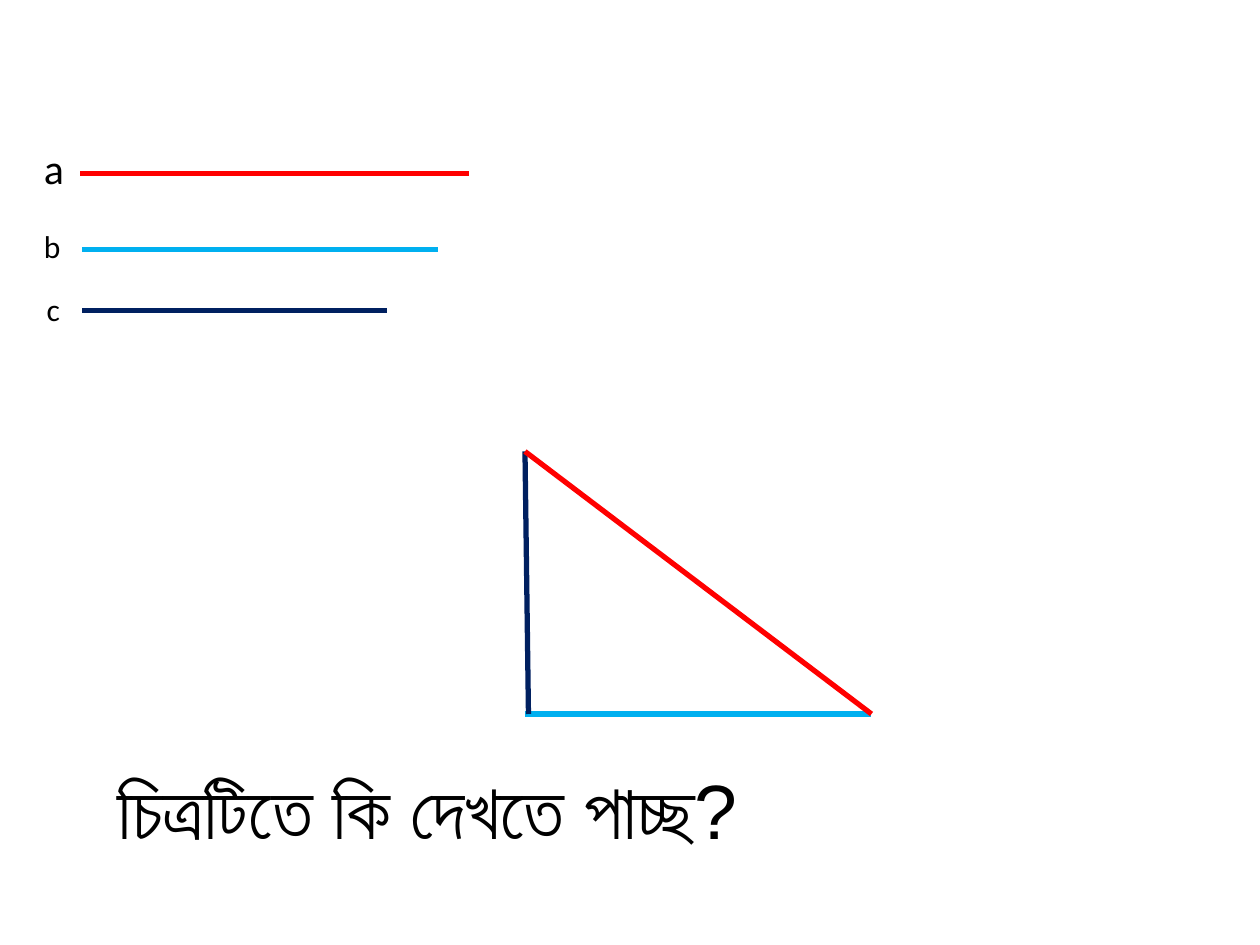
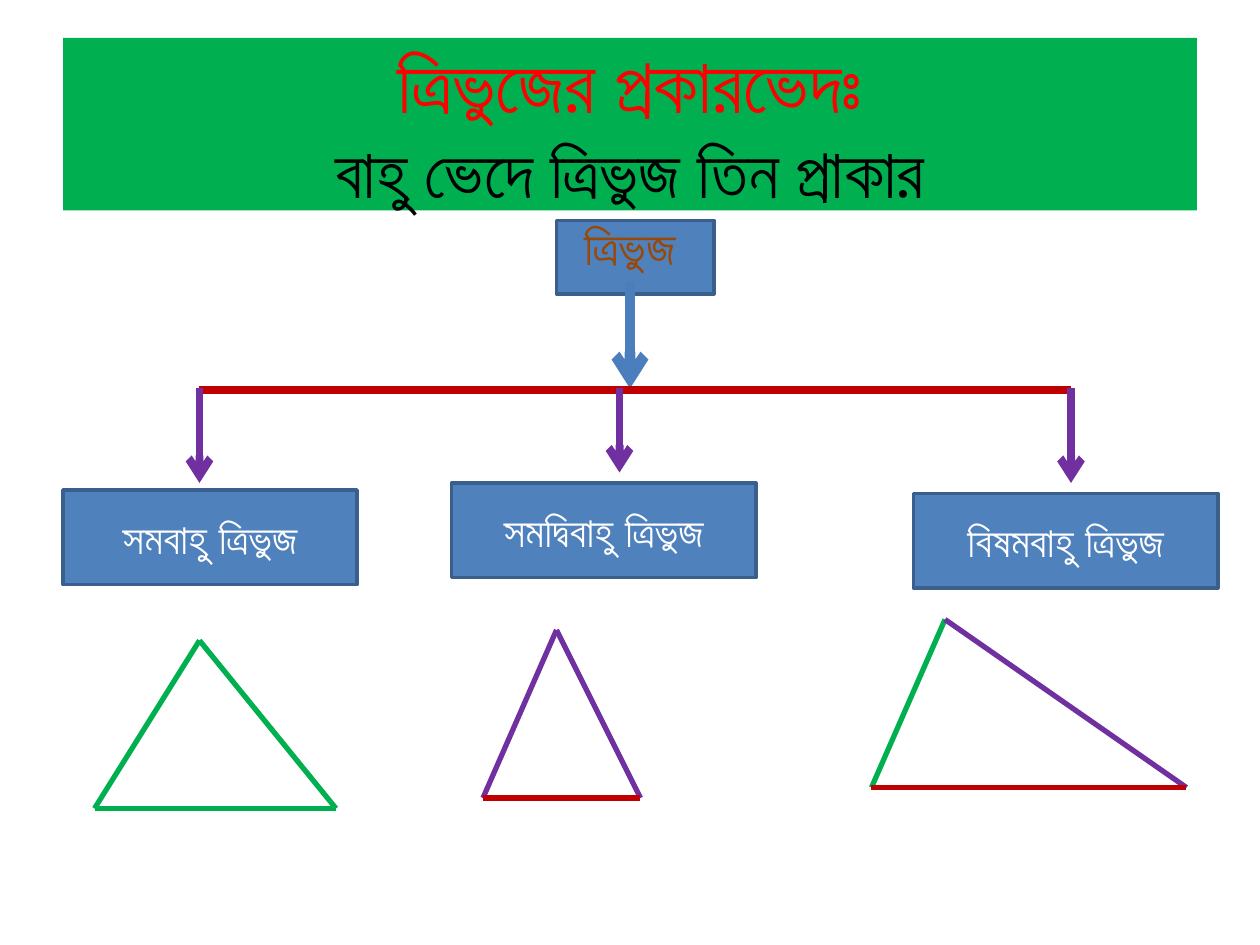
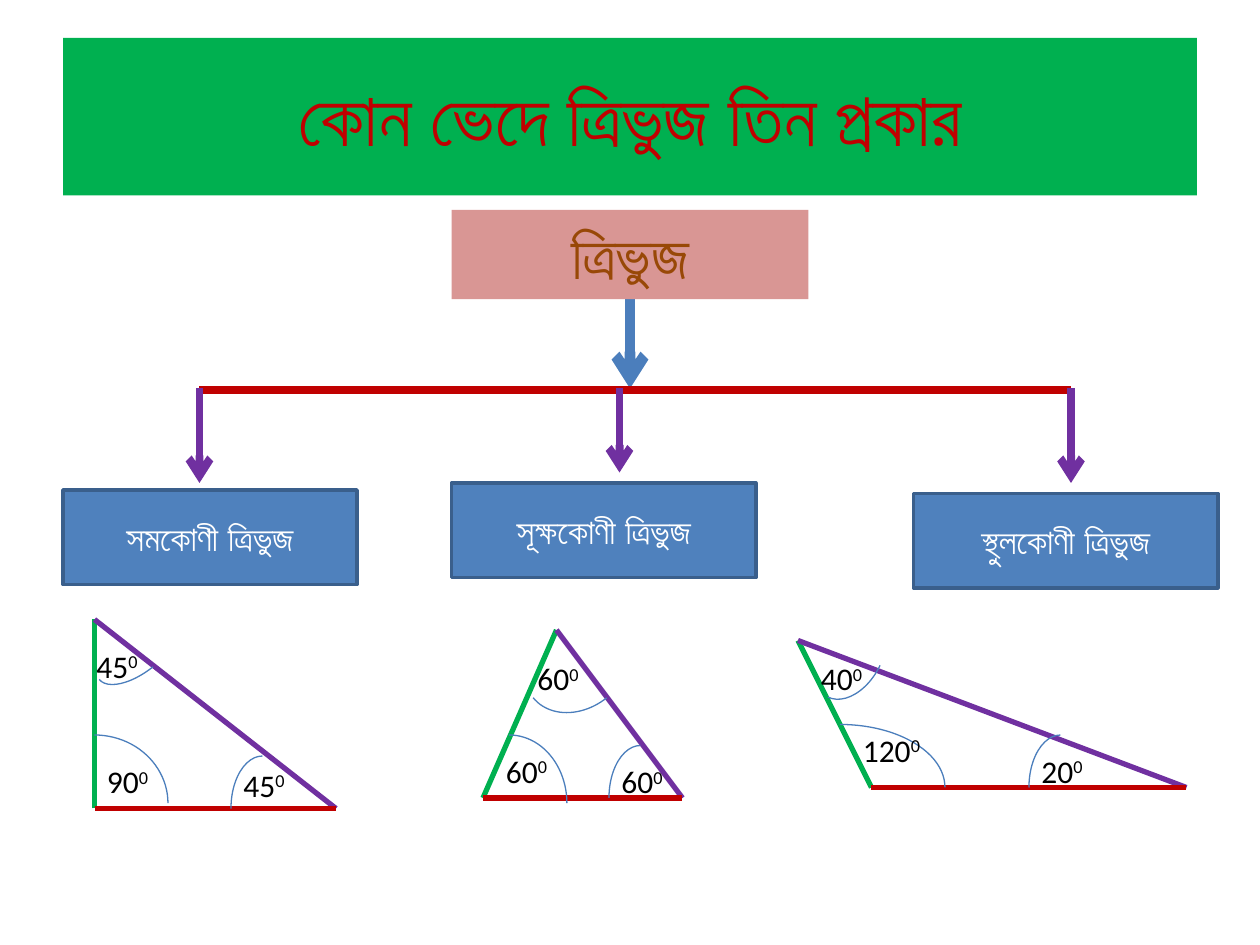
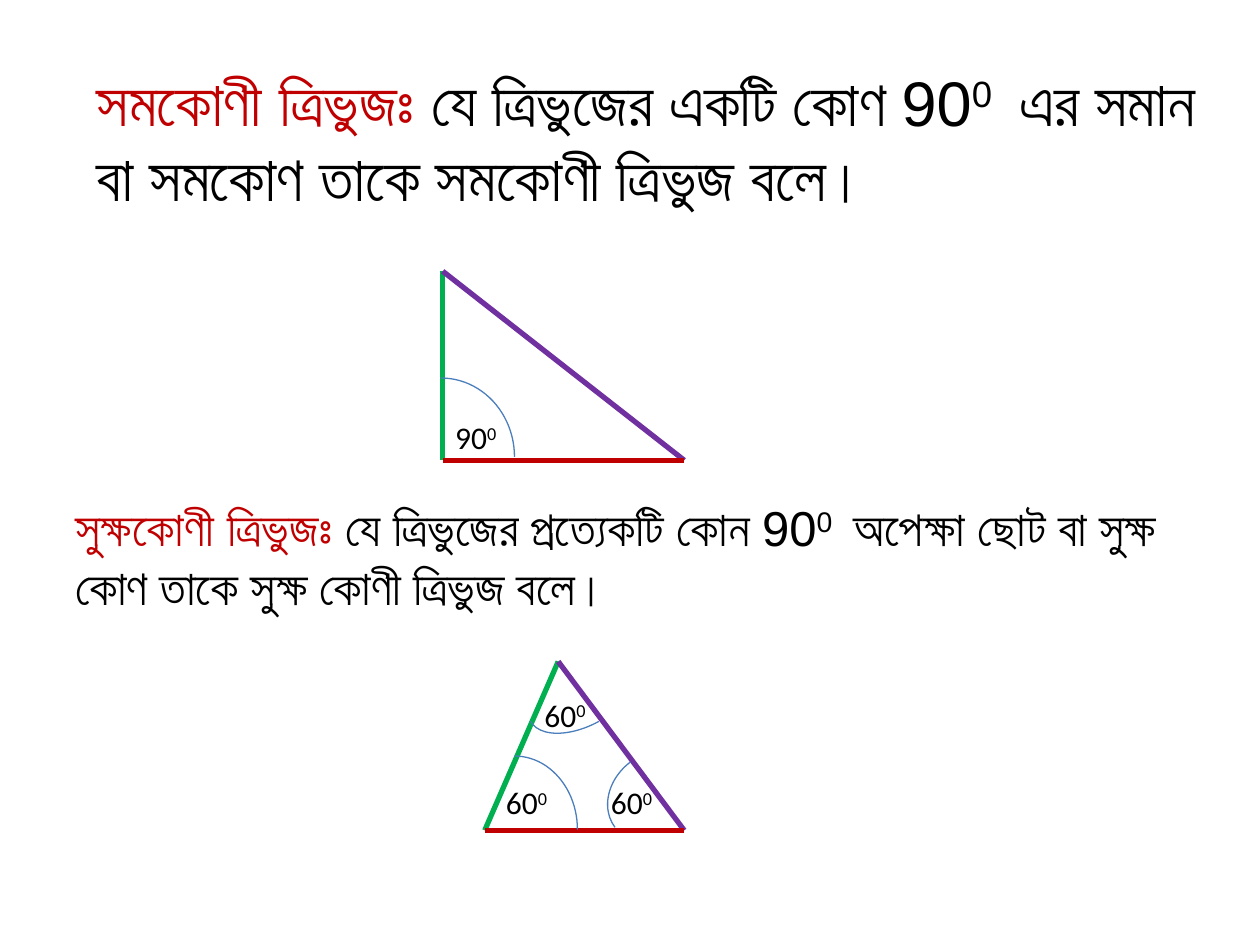
from pptx import Presentation
from pptx.dml.color import RGBColor
from pptx.enum.shapes import MSO_CONNECTOR as Connector, MSO_SHAPE as Shape
from pptx.enum.text import MSO_ANCHOR as Anchor, MSO_AUTO_SIZE as AutoSize, PP_ALIGN as Align
from pptx.oxml.ns import qn
from pptx.util import Pt
from lxml.etree import SubElement

COLORS = {
    "black": "000000", "white": "FFFFFF", "red": "FF0000", "sky": "00B0F0",
    "navy": "002060", "green": "00B050", "crimson": "C00000", "purple": "7030A0",
    "blue": "4F81BD", "border": "3A5F8C", "stroke": "4B7EBC", "brown": "984807",
    "rose": "D99694",
}
TITLE_ONLY, BLANK = 5, 6
BRANCHES = [
    (114, 276, (36, 280, 168, 54)),
    (354, 270, (258, 276, 174, 54)),
    (612, 276, (522, 282, 174, 54)),
]
MIXED_SIDES = ("green", "purple", "crimson")


def rgb(name):
    return RGBColor.from_string(COLORS[name])


def points(values):
    return [Pt(value) for value in values]


def add_run(paragraph, text, size=18, color="black", font="Arial", bold=False, raised=False):
    run = paragraph.add_run()
    run.text = text
    run.font.size = Pt(size)
    run.font.name = font
    run.font.bold = bold
    run.font.color.rgb = rgb(color)
    if raised:
        run._r.get_or_add_rPr().set("baseline", "30000")


def add_text(slide, box, runs, align=Align.LEFT, fill=None):
    shape = slide.shapes.add_textbox(*points(box))
    shape.text_frame.word_wrap = True
    if fill:
        shape.fill.solid()
        shape.fill.fore_color.rgb = rgb(fill)
    paragraph = shape.text_frame.paragraphs[0]
    paragraph.alignment = align
    for text, style in runs:
        add_run(paragraph, text, **style)


def add_box(slide, box, text="", size=24):
    shape = slide.shapes.add_shape(Shape.RECTANGLE, *points(box))
    shape.shadow.inherit = False
    shape.fill.solid()
    shape.fill.fore_color.rgb = rgb("blue")
    shape.line.color.rgb = rgb("border")
    shape.line.width = Pt(2)
    if text:
        shape.text_frame.vertical_anchor = Anchor.MIDDLE
        paragraph = shape.text_frame.paragraphs[0]
        paragraph.alignment = Align.CENTER
        add_run(paragraph, text, size=size, color="white", bold=True)


def add_line(slide, start, end, color, width=3, arrow=False):
    connector = slide.shapes.add_connector(Connector.STRAIGHT, *points(start + end))
    connector.line.color.rgb = rgb(color)
    connector.line.width = Pt(width)
    if arrow:
        SubElement(connector.line._get_or_add_ln(), qn("a:tailEnd"), type="arrow")
    SubElement(connector._element.spPr, qn("a:effectLst"))


def add_triangle(slide, left, apex, right, sides=MIXED_SIDES):
    corners = [(left, apex), (apex, right), (left, right)]
    for (start, end), color in zip(corners, sides):
        add_line(slide, start, end, color)


def add_angle(slide, degrees, label, arc_box, rotation=0, flip=False):
    arc = slide.shapes.add_shape(Shape.ARC, *points(arc_box))
    arc.shadow.inherit = False
    arc.fill.background()
    arc.line.color.rgb = rgb("stroke")
    arc.line.width = Pt(0.75)
    arc.rotation = rotation
    if flip:
        arc._element.spPr.xfrm.set("flipH", "1")
    add_text(slide, label + (72, 29), [
        (degrees, {"font": "Calibri"}),
        ("0", {"font": "Calibri", "raised": True}),
    ])


def add_title(slide, height, lines):
    title = slide.shapes.title
    title.left, title.top, title.width, title.height = points((36, 21.6, 648, height))
    title.fill.solid()
    title.fill.fore_color.rgb = rgb("green")
    frame = title.text_frame
    frame.auto_size = AutoSize.NONE
    frame.vertical_anchor = Anchor.MIDDLE
    paragraph = frame.paragraphs[0]
    paragraph.alignment = Align.CENTER
    for index, (text, size, color) in enumerate(lines):
        if index:
            paragraph.add_line_break()
        add_run(paragraph, text, size=size, color=color)


def add_branches(slide, root_bottom, names, size):
    add_line(slide, (360, root_bottom), (360, 222), "stroke", 6, arrow=True)
    add_line(slide, (114, 223), (612, 223), "crimson", 4.5)
    for (x, tip, box), name in zip(BRANCHES, names):
        add_line(slide, (x, 222), (x, tip), "purple", 4.5, arrow=True)
        add_box(slide, box, name, size)


def add_slide(presentation, layout):
    return presentation.slides.add_slide(presentation.slide_layouts[layout])


def build_question(presentation):
    slide = add_slide(presentation, BLANK)
    sides = [
        ("a", 24, (18, 78, 30, 36), (46, 99), (268, 99), "red"),
        ("b", 18, (18, 126, 24, 29), (47, 142.5), (250.5, 142.5), "sky"),
        ("c", 18, (19.5, 162, 18, 29), (47, 177.5), (221, 177.5), "navy"),
    ]
    for name, size, box, start, end, color in sides:
        add_line(slide, start, end, color)
        add_text(slide, box, [(name, {"size": size, "font": "Calibri"})])
    add_line(slide, (300, 408), (498, 408), "sky")
    add_line(slide, (302, 408), (300, 258), "navy")
    add_line(slide, (300, 258), (498, 408), "red")
    add_text(slide, (60, 432, 600, 60.5), [("চিত্রটিতে কি দেখতে পাচ্ছ?", {"size": 44})])


def build_types_by_side(presentation):
    slide = add_slide(presentation, TITLE_ONLY)
    add_title(slide, 98.6, [
        ("ত্রিভুজের প্রকারভেদঃ", 44.1, "red"),
        ("বাহু ভেদে ত্রিভুজ তিন প্রাকার", 39.6, "black"),
    ])
    add_box(slide, (318, 126, 90, 42))
    add_text(slide, (258, 120, 204, 41), [("ত্রিভুজ", {"size": 28, "color": "brown"})], Align.CENTER)
    add_branches(slide, 161, ["সমবাহু ত্রিভুজ", "সমদ্বিবাহু ত্রিভুজ", "বিষমবাহু ত্রিভুজ"], 24)
    add_triangle(slide, (54, 462), (114, 366), (192, 462), ("green", "green", "green"))
    add_triangle(slide, (276, 456), (318, 360), (366, 456), ("purple", "purple", "crimson"))
    add_triangle(slide, (498, 450), (540, 354), (678, 450))


def build_types_by_angle(presentation):
    slide = add_slide(presentation, TITLE_ONLY)
    add_title(slide, 90, [("কোন ভেদে ত্রিভুজ তিন প্রকার", 43.2, "crimson")])
    add_branches(slide, 171, ["সমকোণী ত্রিভুজ", "সূক্ষকোণী ত্রিভুজ", "স্থুলকোণী ত্রিভুজ"], 20)
    add_text(slide, (258, 120, 204, 51), [("ত্রিভুজ", {"size": 36, "color": "brown"})],
             Align.CENTER, fill="rose")
    add_triangle(slide, (54, 462), (54, 354), (192, 462))
    add_triangle(slide, (276, 456), (318, 360), (390, 456))
    add_triangle(slide, (498, 450), (456, 366), (678, 450))
    add_angle(slide, "90", (54, 432), (12, 420, 84, 78))
    add_angle(slide, "45", (132, 434), (132, 432, 36, 60), flip=True)
    add_angle(slide, "45", (48, 366), (50.5, 357, 57, 27), rotation=141.4)
    add_angle(slide, "60", (282, 426), (258, 420, 66, 78))
    add_angle(slide, "60", (348, 432), (348, 426, 36, 60), flip=True)
    add_angle(slide, "60", (300, 373), (297.5, 352, 65.5, 52.5), rotation=141.4)
    add_angle(slide, "120", (486, 414), (420, 414, 120, 72))
    add_angle(slide, "40", (462, 373), (456.5, 353, 58.5, 38), rotation=115.7)
    add_angle(slide, "20", (588, 426), (588, 420, 36, 60), flip=True)


def add_definition(slide, box, size, term, opening, ending):
    add_text(slide, box, [
        (term, {"size": size, "color": "crimson", "bold": True}),
        (opening, {"size": size}),
        ("0 ", {"size": size, "raised": True}),
        (ending, {"size": size}),
    ])


def build_definitions(presentation):
    slide = add_slide(presentation, BLANK)
    add_definition(slide, (48, 32.5, 648, 138), 36, "সমকোণী ত্রিভুজঃ ",
                   "যে ত্রিভুজের একটি কোণ 90",
                   " এর সমান বা সমকোণ তাকে সমকোণী ত্রিভুজ বলে।")
    add_triangle(slide, (253, 263), (253, 155), (391, 263))
    add_angle(slide, "90", (253, 235.5), (210, 216, 84, 90))
    add_definition(slide, (36, 281, 654, 75), 28, "সুক্ষকোণী ত্রিভুজঃ ",
                   "যে ত্রিভুজের প্রত্যেকটি কোন 90",
                   " অপেক্ষা ছোট বা সুক্ষ কোণ তাকে সুক্ষ কোণী ত্রিভুজ বলে।")
    add_triangle(slide, (277, 474.5), (319, 378), (391, 474.5))
    add_angle(slide, "60", (282, 444), (258, 432, 72, 84))
    add_angle(slide, "60", (304, 394), (299, 377, 68.5, 37.5), rotation=151.4)
    add_angle(slide, "60", (342, 444), (350.5, 425.5, 49, 59), rotation=233)


def main():
    presentation = Presentation()
    presentation.slide_width, presentation.slide_height = Pt(720), Pt(540)
    build_question(presentation)
    build_types_by_side(presentation)
    build_types_by_angle(presentation)
    build_definitions(presentation)
    presentation.save("out.pptx")


if __name__ == "__main__":
    main()
